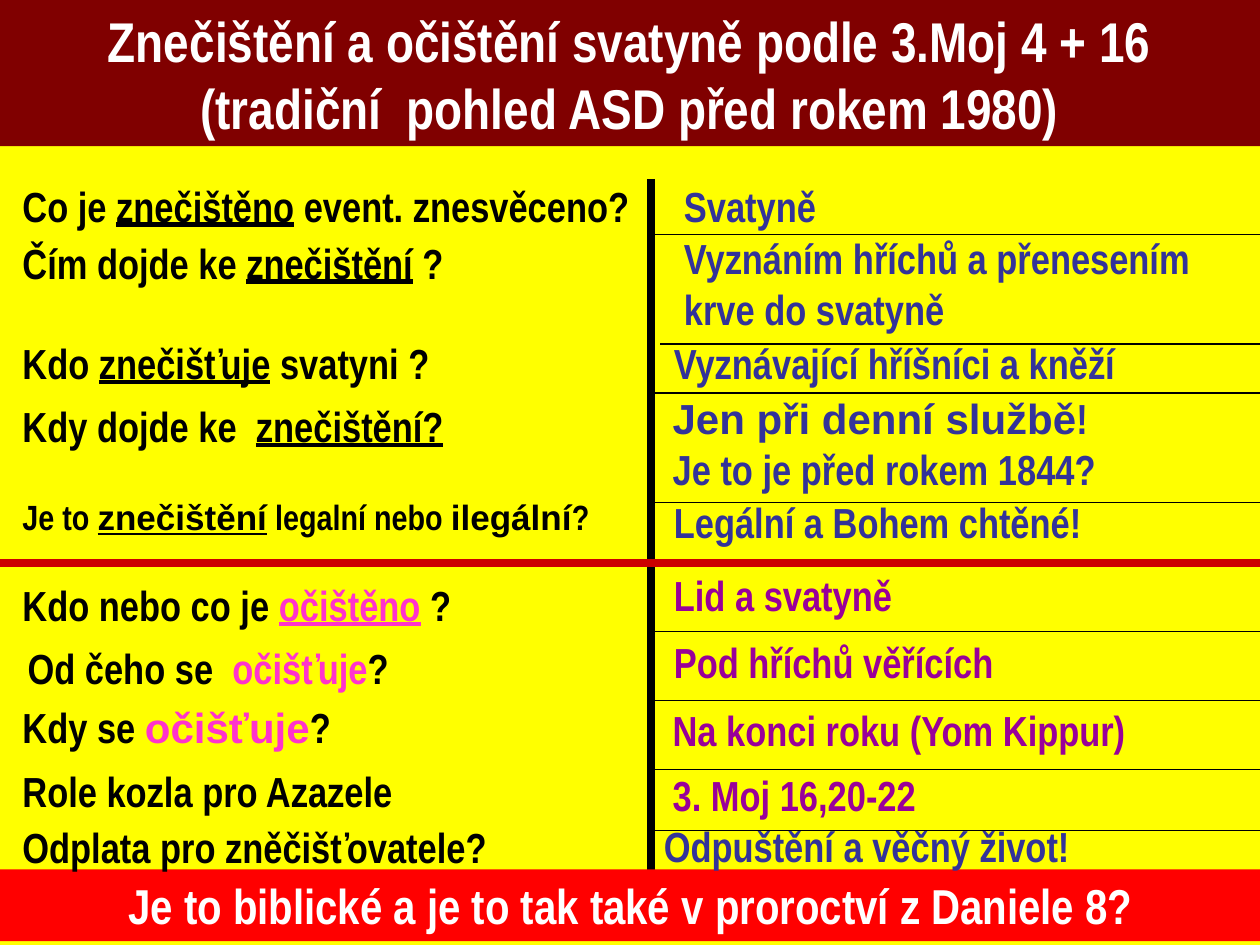
from lxml import etree
from pptx import Presentation
from pptx.dml.color import RGBColor
from pptx.enum.shapes import MSO_CONNECTOR, MSO_SHAPE
from pptx.enum.text import MSO_ANCHOR, MSO_AUTO_SIZE, PP_ALIGN
from pptx.oxml.ns import qn
from pptx.util import Inches, Pt

STRAIGHT = MSO_CONNECTOR.STRAIGHT
RECT = MSO_SHAPE.RECTANGLE
TOP = MSO_ANCHOR.TOP
NO_FIT = MSO_AUTO_SIZE.NONE
CENTER, LEFT = PP_ALIGN.CENTER, PP_ALIGN.LEFT

BLACK, WHITE, PINK = "000000", "FFFFFF", "FF33CC"
BLUE, PURPLE = "333399", "990099"
UNDERLINE = {"underline": True}
WIDE = {"name": "Arial"}

QUESTIONS = [
    (0.08, 1.38, 5.33, 24, 1, [("Co je ", {}), ("znečištěno", UNDERLINE), (" event. znesvěceno?", {})]),
    (0.08, 1.88, 5.53, 24, 0.9, [("Čím dojde ke ", {}), ("znečištění", UNDERLINE), (" ?", {})]),
    (0.08, 2.63, 3.67, 24, 1, [("Kdo ", {}), ("znečišťuje", UNDERLINE), (" svatyni ?", {})]),
    (0.08, 3.13, 5.67, 24, 1, [("Kdy dojde ke  ", {}), ("znečištění?", UNDERLINE)]),
    (0.08, 3.88, 5.45, 20, 1, [("Je to ", {}), ("znečištění", {**WIDE, **UNDERLINE}),
                               (" legalní nebo ", {}), ("ilegální", WIDE), ("?", {})]),
    (0.08, 4.55, 3.61, 24, 1, [("Kdo nebo co je ", {}), ("očištěno", {"color": PINK, **UNDERLINE}), (" ?", {})]),
    (0.12, 5.05, 3.42, 24, 1, [("Od čeho se ", {}), (" očišťuje", {"color": PINK}), ("?", {})]),
    (0.08, 5.52, 3.42, 24, 1, [("Kdy se ", {}), ("očišťuje", {"color": PINK, **WIDE}), ("?", {})]),
    (0.08, 6.03, 3.2, 24, 1, [("Role kozla pro Azazele", {})]),
    (0.08, 6.47, 4.83, 24, 1, [("Odplata pro zněčišťovatele?", {})]),
]
ANSWERS = [
    (5.33, 1.38, 2.33, 1, BLUE, [[("Svatyně", {})]]),
    (5.33, 1.8, 4.5, 1, BLUE, [[("Vyznáním hříchů a přenesením krve do svatyně", {})]]),
    (5.25, 2.63, 4.75, 1, BLUE, [[("Vyznávající hříšníci a kněží", {})]]),
    (5.24, 3.07, 4.41, 1, BLUE, [[("Jen při denní službě", WIDE), ("!", {})],
                                 [("Je to je před rokem 1844?", {})]]),
    (5.25, 3.97, 4, 0.8, BLUE, [[("Legální a Bohem chtěné!", {})]]),
    (5.25, 4.55, 4.17, 0.8, PURPLE, [[("Lid a svatyně", {})]]),
    (5.25, 5.05, 4.4, 0.9, PURPLE, [[("Pod hříchů věřících", {})]]),
    (5.24, 5.59, 4.76, 0.9, PURPLE, [[("Na konci roku (Yom Kippur)", {})]]),
    (5.24, 6.06, 2.67, 1, PURPLE, [[("3. Moj 16,20-22", {})]]),
    (5.17, 6.46, 4.83, 1, BLUE, [[("Odpuštění a věčný život!", {})]]),
]
ROW_RULES = [(5.16, 1.86), (5.24, 2.73), (5.16, 3.12), (5.16, 3.99),
             (5.16, 5.01), (5.16, 5.56), (5.16, 6.11), (5.16, 6.59)]


def rgb(value):
    """Return the colour for a hex string."""
    return RGBColor.from_string(value)


class SlideBuilder:
    """Hold the text style and the current slide."""

    base = {"name": "Arial Narrow", "bold": True}

    def __init__(self, prs, background):
        """Add a slide that has a title and a plain background."""
        self.s = prs.slides.add_slide(prs.slide_layouts[5])
        fill = self.s.background.fill
        fill.solid()
        fill.fore_color.rgb = rgb(background)

    def set_text(self, sp, paragraphs, size, color, align=LEFT, spacing=1):
        """Fill a shape with paragraphs of styled runs."""
        tf = sp.text_frame
        frame = {"word_wrap": True, "auto_size": NO_FIT, "vertical_anchor": TOP}
        for key, value in frame.items():
            setattr(tf, key, value)
        for i, runs in enumerate(paragraphs):
            p = tf.add_paragraph() if i else tf.paragraphs[0]
            p.alignment, p.line_spacing = align, spacing
            for text, extra in runs:
                r = p.add_run()
                r.text = text
                style = {**self.base, "size": Pt(size), "color": color, **extra}
                r.font.color.rgb = rgb(style.pop("color"))
                for key, value in style.items():
                    setattr(r.font, key, value)

    def band(self, sp, fill, text, size):
        """Turn a shape into a filled band with a centred caption."""
        sp.fill.solid()
        sp.fill.fore_color.rgb = rgb(fill)
        self.set_text(sp, [[(text, {})]], size, WHITE, CENTER)

    def title(self, height, fill, text, size):
        """Place the title across the top of the slide."""
        sp = self.s.shapes.title
        box = {"left": 0, "top": 0, "width": 10, "height": height}
        for key, value in box.items():
            setattr(sp, key, Inches(value))
        self.band(sp, fill, text, size)

    def footer(self, top, height, fill, text, size):
        """Add a full-width band at the bottom."""
        sp = self.s.shapes.add_shape(RECT, 0, Inches(top), Inches(10), Inches(height))
        sp.shadow.inherit = False
        sp.line.fill.background()
        self.band(sp, fill, text, size)

    def text(self, x, y, w, paragraphs, size, color, spacing):
        """Add a text box tall enough for its paragraphs."""
        h = 0.5 * len(paragraphs)
        sp = self.s.shapes.add_textbox(Inches(x), Inches(y), Inches(w), Inches(h))
        self.set_text(sp, paragraphs, size, color, spacing=spacing)

    def line(self, x1, y1, x2, y2, color=BLACK, width=0.75):
        """Add a straight line without a shadow."""
        sp = self.s.shapes.add_connector(STRAIGHT, *map(Inches, (x1, y1, x2, y2)))
        sp.line.color.rgb = rgb(color)
        sp.line.width = Pt(width)
        etree.SubElement(sp.element.spPr, qn("a:effectLst"))


def main():
    """Build and save the slide."""
    prs = Presentation()
    prs.slide_width, prs.slide_height = Inches(10), Inches(7.5)
    slide = SlideBuilder(prs, "FFFF00")
    slide.title(1.16, "800000", "Znečištění a očištění svatyně podle 3.Moj 4 + 16 "
                "(tradiční  pohled ASD před rokem 1980)", 32)
    slide.line(5.17, 1.42, 5.17, 7.22, width=4.5)
    slide.line(0, 4.47, 10, 4.47, "CC0000", 4.5)
    slide.footer(6.9, 0.57, "FF0000", "Je to biblické a je to tak také v proroctví z Daniele 8?", 28)
    for x, y, w, size, spacing, runs in QUESTIONS:
        slide.text(x, y, w, [runs], size, BLACK, spacing)
    for x, y, w, spacing, color, paragraphs in ANSWERS:
        slide.text(x, y, w, paragraphs, 24, color, spacing)
    for x, y in ROW_RULES:
        slide.line(x, y, 10, y)
    prs.save("out.pptx")


if __name__ == "__main__":
    main()
